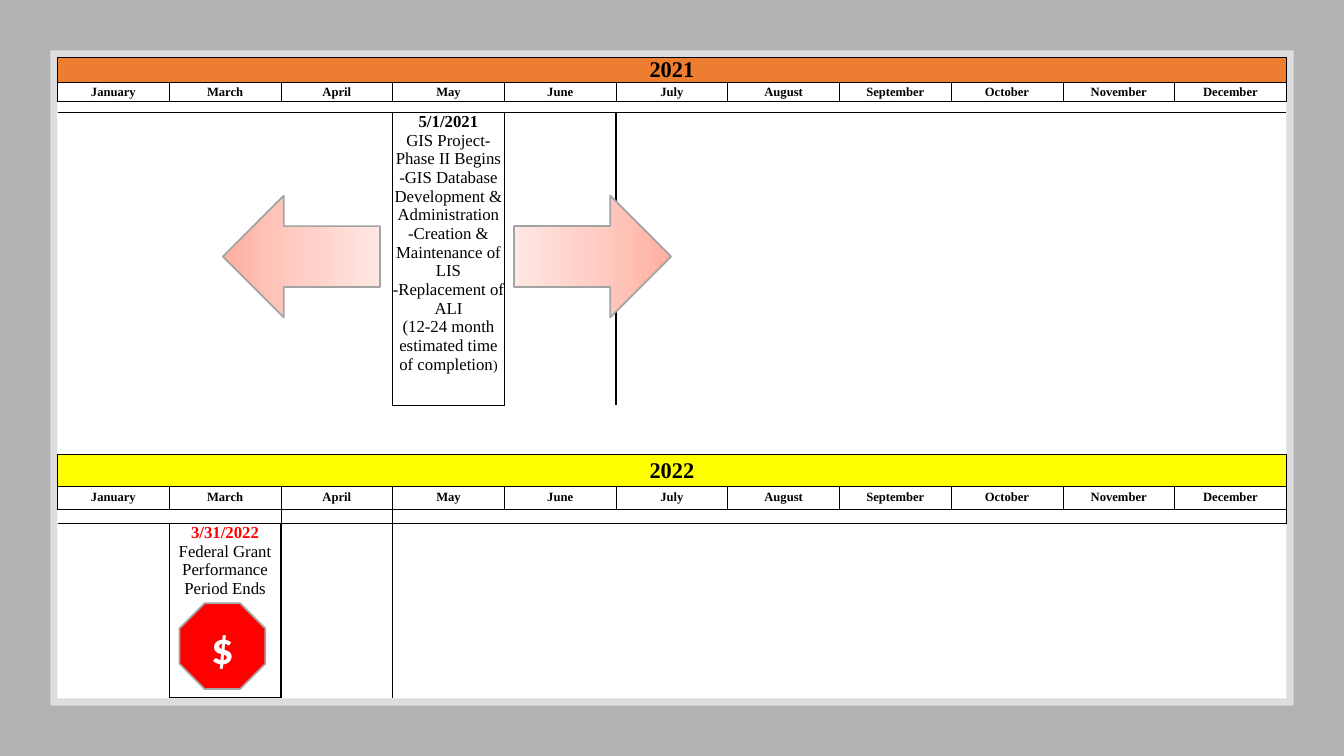
from collections import defaultdict, namedtuple
from lxml.etree import SubElement
from pptx import Presentation
from pptx.dml.color import RGBColor
from pptx.enum.shapes import MSO_SHAPE as Shape
from pptx.enum.text import MSO_ANCHOR as Anchor, PP_ALIGN as Align
from pptx.oxml import parse_xml
from pptx.oxml.ns import nsdecls, qn
from pptx.util import Cm, Pt

COLORS = {
    "backdrop": "B2B2B2", "frame": "DDDDDD", "paper": "FFFFFF", "ink": "000000",
    "orange": "ED7D31", "yellow": "FFFF00", "red": "FF0000", "outline": "A3A3A3",
    "blush": "FFAFA0", "blush_mid": "FFCEC5", "blush_light": "FFE7E3",
}
MONTHS = ["January", "March", "April", "May", "June", "July", "August",
          "September", "October", "November", "December"]
SERIF = "Times New Roman"
PLAIN_TABLE = "{2D5ABB26-0587-4C30-8999-92F81FD0307C}"
NEIGHBOURS = {"L": (0, -1, "R"), "R": (0, 1, "L"), "T": (-1, 0, "B"), "B": (1, 0, "T")}
THIN, THICK = 0.5, 1
Box = namedtuple("Box", "left top width height")


def color(name):
    """Return the named colour."""
    return RGBColor.from_string(COLORS[name])


def inset(box, margin):
    """Return the box shrunk by a margin on every side."""
    return Box(box.left + margin, box.top + margin,
               box.width - 2 * margin, box.height - 2 * margin)


def add_shape(page, kind, box, fill=None, outlined=False):
    """Place a preset shape with a solid fill and an optional grey outline."""
    shape = page.shapes.add_shape(kind, *map(Cm, box))
    shape.shadow.inherit = False
    if fill:
        shape.fill.solid()
        shape.fill.fore_color.rgb = color(fill)
    if outlined:
        shape.line.color.rgb = color("outline")
        shape.line.width = Pt(1.25)
    else:
        shape.line.fill.background()
    return shape


def style_paragraph(para, size, tint="ink", bold=True, font=SERIF):
    """Centre a paragraph and set its font."""
    para.alignment = Align.CENTER
    para.font.name = font
    para.font.size = Pt(size)
    para.font.bold = bold
    para.font.color.rgb = color(tint)


def write_event(cell, date, lines, date_color="ink", closing=""):
    """Write a bold date, its description lines and a smaller closing mark."""
    para = cell.text_frame.paragraphs[0]
    style_paragraph(para, 12, bold=False)
    span = para.add_run()
    span.text = date
    span.font.bold = True
    span.font.color.rgb = color(date_color)
    for line in lines:
        para.add_line_break()
        para.add_run().text = line
    if closing:
        span = para.add_run()
        span.text = closing
        span.font.size = Pt(10)


def draw_edges(table, edges):
    """Draw each cell edge, repeating it on the neighbouring cell."""
    mirrored = defaultdict(dict)
    for (row, column, side), width in edges.items():
        mirrored[row, column][side] = width
        down, across, opposite = NEIGHBOURS[side]
        near = row + down, column + across
        if 0 <= near[0] < len(table.rows) and 0 <= near[1] < len(table.columns):
            mirrored[near][opposite] = width
    for (row, column), sides in mirrored.items():
        properties = table.cell(row, column)._tc.get_or_add_tcPr()
        for side in "BTRL":
            if side in sides:
                properties.insert(0, parse_xml(
                    f'<a:ln{side} {nsdecls("a")} w="{Pt(sides[side])}"><a:solidFill>'
                    f'<a:srgbClr val="{COLORS["ink"]}"/></a:solidFill></a:ln{side}>'))


def add_year(page, box, year, fill, heights, event_column, event, extra_edges):
    """Build a year's calendar table and return the box of its event cell."""
    count = len(MONTHS)
    frame = page.shapes.add_table(len(heights), count, *map(Cm, box))
    table = frame.table
    table.first_row = table.horz_banding = False
    table._tbl.tblPr.find(qn("a:tableStyleId")).text = PLAIN_TABLE
    for row, height in zip(table.rows, heights):
        row.height = Cm(height)
    for column in table.columns:
        column.width = Cm(box.width / count)
    table.cell(0, 0).merge(table.cell(0, count - 1))

    texts = {(1, column): (month, 9) for column, month in enumerate(MONTHS)}
    texts[0, 0] = year, 16
    for row in range(len(heights)):
        for column in range(count):
            cell = table.cell(row, column)
            cell.margin_left = cell.margin_right = cell.margin_top = cell.margin_bottom = 0
            cell.fill.background()
            para = cell.text_frame.paragraphs[0]
            if (row, column) in texts:
                para.text, size = texts[row, column]
                style_paragraph(para, size)
                cell.vertical_anchor = Anchor.MIDDLE
            elif (row, column) != (3, event_column):
                SubElement(para._p, qn("a:endParaRPr"), sz="400")
    title = table.cell(0, 0)
    title.fill.solid()
    title.fill.fore_color.rgb = color(fill)
    write_event(table.cell(3, event_column), **event)

    edges = {(0, 0, "R"): THICK}
    for column in range(count):
        edges |= {(0, column, "T"): THICK, (1, column, "T"): THIN,
                  (1, column, "R"): THIN, (1, column, "B"): THICK}
    for row in (0, 1):
        edges |= {(row, 0, "L"): THICK, (row, count - 1, "R"): THICK}
    edges |= {(3, event_column, side): THICK for side in "LRTB"}
    draw_edges(table, edges | extra_edges)
    return Box(box.left + event_column * box.width / count,
               box.top + sum(heights[:3]), box.width / count, heights[3])


def add_arrow(page, box, rotation):
    """Place a block arrow that darkens towards its tip."""
    arrow = add_shape(page, Shape.RIGHT_ARROW, box, outlined=True)
    arrow.rotation = rotation
    arrow.fill.gradient()
    arrow.fill.gradient_angle = 180
    stops = arrow._element.spPr.find(qn("a:gradFill")).find(qn("a:gsLst"))
    for stop in list(stops):
        stops.remove(stop)
    for position, name in enumerate(("blush", "blush_mid", "blush_light")):
        stop = SubElement(stops, qn("a:gs"), pos=str(position * 50000))
        SubElement(stop, qn("a:srgbClr"), val=COLORS[name])


def add_arrows(page, box):
    """Point one arrow away from each side of the event cell."""
    width, height, top = 3.96, 3.07, box.top + 2.1
    add_arrow(page, Box(box.left + box.width + 0.24, top, width, height), 0)
    add_arrow(page, Box(box.left - 0.32 - width, top, width, height), 180)


def add_stop_sign(page, box):
    """Put a red octagon with a dollar sign at the foot of the event cell."""
    sign = Box(box.left + 0.26, box.top + box.height - 2.38, 2.16, 2.16)
    add_shape(page, Shape.OCTAGON, sign, "red", outlined=True)
    label = page.shapes.add_textbox(*map(Cm, inset(sign, 0.28)))
    label.text_frame.word_wrap = True
    para = label.text_frame.paragraphs[0]
    para.text = "$"
    style_paragraph(para, 32, "paper", font="Calibri")


def add_timeline(page, box):
    """Lay out the framed two-year timeline."""
    paper = inset(box, 1.45)
    for area, fill in ((box, "backdrop"), (inset(box, 1.27), "frame"), (paper, "paper")):
        add_shape(page, Shape.RECTANGLE, area, fill)
    project = {"date": "5/1/2021", "closing": ")", "lines": [
        "GIS Project-Phase II Begins", "-GIS Database Development & Administration",
        "-Creation & Maintenance of LIS", "-Replacement of ALI",
        "(12-24 month estimated time of completion"]}
    grant = {"date": "3/31/2022", "date_color": "red",
             "lines": ["Federal Grant", "Performance Period Ends"]}
    first = add_year(page, paper._replace(height=8.84), "2021", "orange",
                     (0.62, 0.48, 0.28, 7.37), 3, project, {})
    second = add_year(page, paper._replace(top=paper.top + 10.01, height=6.12), "2022",
                      "yellow", (0.79, 0.58, 0.36, 4.39), 1, grant,
                      {(2, 1, "R"): THIN, (2, len(MONTHS) - 1, "R"): THIN})
    add_arrows(page, first)
    add_stop_sign(page, second)


def main():
    """Create and save the deck."""
    deck = Presentation()
    deck.slide_width, deck.slide_height = Cm(33.87), Cm(19.05)
    page = deck.slides.add_slide(deck.slide_layouts[6])
    add_timeline(page, Box(0, 0, 33.87, 19.05))
    deck.save("out.pptx")


if __name__ == "__main__":
    main()
